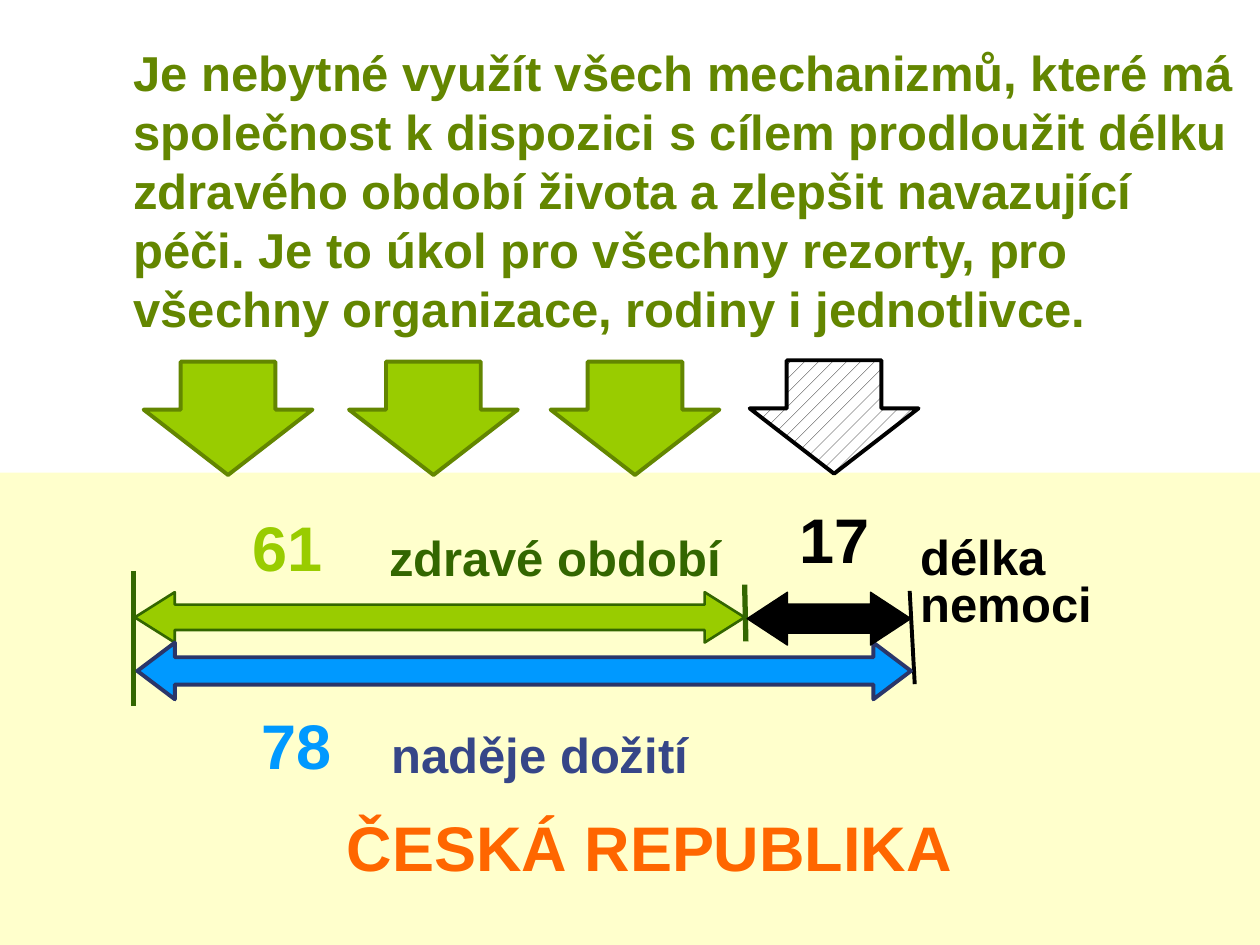
from dataclasses import dataclass

from lxml.etree import SubElement
from pptx import Presentation
from pptx.dml.color import RGBColor
from pptx.enum.dml import MSO_PATTERN
from pptx.enum.shapes import MSO_CONNECTOR, MSO_SHAPE
from pptx.enum.text import MSO_ANCHOR, MSO_AUTO_SIZE, PP_ALIGN
from pptx.oxml.ns import qn
from pptx.util import Inches, Pt


@dataclass(frozen=True)
class Theme:
    """Colours, font and type sizes of the slide."""
    font: str = "Arial"
    body: int = 28
    figure: int = 36
    white: str = "FFFFFF"
    black: str = "000000"
    cream: str = "FFFFCC"
    lime: str = "99CC00"
    olive: str = "638600"
    forest: str = "336600"
    figure_green: str = "008000"
    sky: str = "0099FF"
    navy: str = "2A366A"
    indigo: str = "364688"
    figure_blue: str = "000080"
    orange: str = "FF6600"
    rust: str = "993300"


T = Theme()


def rgb(value):
    """Turn a hex string into a colour."""
    return RGBColor.from_string(value)


def write(tf, text, color, size=T.body):
    """Fill a text frame and format its runs."""
    tf.text = text
    for p in tf.paragraphs:
        for r in p.runs:
            r.font.name, r.font.size, r.font.bold = T.font, Pt(size), True
            r.font.color.rgb = rgb(color)


def add_label(slide, x, y, w, h, text, color):
    """Add a wrapped, left-aligned label and return its text frame."""
    tf = slide.shapes.add_textbox(Inches(x), Inches(y), Inches(w), Inches(h)).text_frame
    tf.word_wrap = True
    write(tf, text, color)
    return tf


def add_figure(slide, x, y, w, h, text, color, outline, width=1.5):
    """Add large centred text with outlined letters."""
    tf = slide.shapes.add_textbox(Inches(x), Inches(y), Inches(w), Inches(h)).text_frame
    tf.word_wrap = False
    write(tf, text, color, T.figure)
    p = tf.paragraphs[0]
    p.alignment = PP_ALIGN.CENTER
    r_pr = p.runs[0].font._element
    ln = r_pr.makeelement(qn("a:ln"), {"w": str(Pt(width))})
    SubElement(SubElement(ln, qn("a:solidFill")), qn("a:srgbClr"), val=outline)
    r_pr.insert(0, ln)


def add_arrow(slide, kind, x, y, w, h, adj, fill, line, width):
    """Add a filled block arrow and return it."""
    sp = slide.shapes.add_shape(kind, Inches(x), Inches(y), Inches(w), Inches(h))
    sp.shadow.inherit = False
    for i, value in enumerate(adj):
        sp.adjustments[i] = value
    sp.fill.solid()
    sp.fill.fore_color.rgb = rgb(fill)
    sp.line.color.rgb = rgb(line)
    sp.line.width = Pt(width)
    return sp


def add_mark(slide, x1, y1, x2, y2, color, width):
    """Add a straight boundary mark."""
    cx = slide.shapes.add_connector(
        MSO_CONNECTOR.STRAIGHT, Inches(x1), Inches(y1), Inches(x2), Inches(y2))
    cx.line.color.rgb = rgb(color)
    cx.line.width = Pt(width)
    SubElement(cx._element.spPr, qn("a:effectLst"))


def place_title(slide, x, y, w, h):
    """Set the statement in the title placeholder."""
    title = slide.shapes.title
    title.left, title.top, title.width, title.height = map(Inches, (x, y, w, h))
    tf = title.text_frame
    tf.word_wrap = True
    tf.auto_size = MSO_AUTO_SIZE.NONE
    tf.vertical_anchor = MSO_ANCHOR.TOP
    write(tf, "Je nebytné využít všech mechanizmů, které má společnost k dispozici "
              "s cílem prodloužit délku zdravého období života a zlepšit navazující péči. "
              "Je to úkol pro všechny rezorty, pro všechny organizace, rodiny i jednotlivce.",
          T.olive)
    tf.paragraphs[0].alignment = PP_ALIGN.LEFT


def draw_pressure_arrows(slide, x, y):
    """Draw three green arrows and a hatched one pointing down."""
    size, adj = (1.34, 0.9), (0.561, 0.576)
    for dx in (0, 1.63, 3.23):
        add_arrow(slide, MSO_SHAPE.DOWN_ARROW, x + dx, y, *size, adj, T.lime, T.olive, 2.25)
    sp = add_arrow(slide, MSO_SHAPE.DOWN_ARROW, x + 4.81, y - 0.01, *size, adj,
                   T.white, T.black, 2.25)
    sp.fill.patterned()
    sp.fill.pattern = MSO_PATTERN.PERCENT_10
    sp.fill.fore_color.rgb = rgb(T.black)
    sp.fill.back_color.rgb = rgb(T.white)


def draw_panel(slide, x, y, w, h):
    """Draw the cream band with the country name."""
    sp = slide.shapes.add_shape(
        MSO_SHAPE.RECTANGLE, Inches(x), Inches(y), Inches(w), Inches(h))
    sp.shadow.inherit = False
    sp.fill.solid()
    sp.fill.fore_color.rgb = rgb(T.cream)
    sp.line.fill.background()
    add_figure(slide, x + 1.08, y + 2.62, 8.15, 0.69, "ČESKÁ REPUBLIKA", T.orange, T.rust, 0.75)


def draw_lifespan(slide, x, y):
    """Draw the healthy, ill and total spans with their figures and labels."""
    both = MSO_SHAPE.LEFT_RIGHT_ARROW
    add_mark(slide, x + 6.16, y + 0.16, x + 6.2, y + 0.9, T.black, 2.25)
    add_mark(slide, x, y, x, y + 1.07, T.forest, 3)
    add_mark(slide, x + 4.85, y + 0.11, x + 4.86, y + 0.56, T.forest, 3)

    add_arrow(slide, both, x + 0.01, y + 0.17, 4.84, 0.4, (0.505, 0.794), T.lime, T.forest, 1.5)
    add_arrow(slide, both, x + 0.03, y + 0.57, 6.14, 0.45, (0.481, 0.663), T.sky, T.navy, 2.25)
    add_arrow(slide, both, x + 4.87, y + 0.17, 1.3, 0.42, (0.55, 0.762), T.black, T.black, 0.75)

    add_label(slide, x + 1.93, y - 0.39, 2.93, 0.61, "zdravé období", T.forest)
    add_label(slide, x + 1.95, y + 1.17, 3.28, 0.57, "naděje dožití", T.indigo)
    illness = add_label(slide, x + 6.15, y - 0.31, 1.63, 0.98, "délka\nnemoci", T.black)
    for p in illness.paragraphs:
        p.line_spacing = 0.8

    add_figure(slide, x + 0.77, y - 0.54, 0.91, 0.58, "61", T.lime, T.figure_green)
    add_figure(slide, x + 0.81, y + 1.03, 0.96, 0.64, "78", T.sky, T.figure_blue)
    add_figure(slide, x + 5.08, y - 0.61, 0.96, 0.64, "17", T.black, T.black)


def main():
    """Build and save the slide."""
    prs = Presentation()
    prs.slide_width, prs.slide_height = Inches(10), Inches(7.5)
    slide = prs.slides.add_slide(prs.slide_layouts[5])
    place_title(slide, 0.96, 0.29, 9.04, 2.44)
    draw_panel(slide, 0, 3.75, 10, 3.75)
    draw_lifespan(slide, 1.06, 4.53)
    draw_pressure_arrows(slide, 1.14, 2.87)
    prs.save("out.pptx")


if __name__ == "__main__":
    main()
